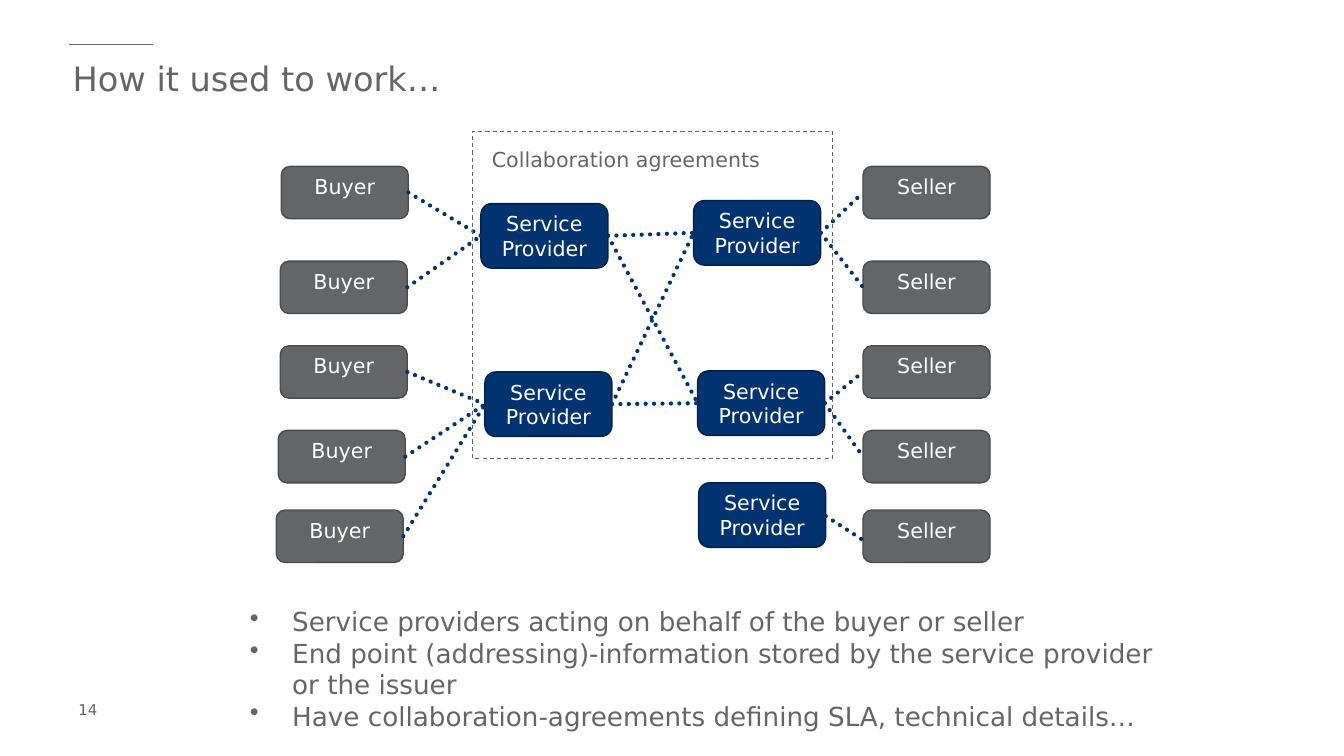
from dataclasses import dataclass

from lxml import etree
from pptx import Presentation
from pptx.dml.color import RGBColor
from pptx.enum.dml import MSO_LINE
from pptx.enum.shapes import MSO_CONNECTOR, MSO_SHAPE
from pptx.enum.text import MSO_ANCHOR, MSO_AUTO_SIZE, PP_ALIGN
from pptx.oxml.ns import qn
from pptx.util import Pt

PX = 9144
TITLE_ONLY = 5
LEFT_SITE, RIGHT_SITE = 1, 3
STRAIGHT = MSO_CONNECTOR.STRAIGHT
ROUNDED, RECTANGLE = MSO_SHAPE.ROUNDED_RECTANGLE, MSO_SHAPE.RECTANGLE
DASH, ROUND_DOT = MSO_LINE.DASH, MSO_LINE.ROUND_DOT
TOP, MIDDLE = MSO_ANCHOR.TOP, MSO_ANCHOR.MIDDLE
LEFT, CENTER = PP_ALIGN.LEFT, PP_ALIGN.CENTER
NO_AUTOFIT = MSO_AUTO_SIZE.NONE


@dataclass(frozen=True)
class Theme:
    font: str = "DejaVu Sans"
    grey: str = "646567"
    grey_edge: str = "4A4B4C"
    navy: str = "00336F"
    navy_edge: str = "00224A"
    white: str = "FFFFFF"
    title: float = 24
    body: float = 18.7
    label: float = 14.7
    number: float = 10.7


class SlideBuilder:
    def __init__(self, slide, theme):
        self.slide = slide
        self.theme = theme

    def add_runs(self, paragraph, text, size, color, align=LEFT):
        paragraph.alignment = align
        for index, line in enumerate(text.split("\n")):
            if index:
                paragraph.add_line_break()
            run = paragraph.add_run()
            run.text = line
            run.font.name = self.theme.font
            run.font.size = Pt(size)
            run.font.color.rgb = RGBColor.from_string(color)

    def place(self, shape, left, top, width, height):
        shape.left, shape.top = left * PX, top * PX
        shape.width, shape.height = width * PX, height * PX

    def title(self, text, *bounds):
        shape = self.slide.shapes.title
        self.place(shape, *bounds)
        frame = shape.text_frame
        frame.auto_size = NO_AUTOFIT
        frame.vertical_anchor = TOP
        frame.margin_left = frame.margin_right = 4 * PX
        frame.margin_top = frame.margin_bottom = 5 * PX
        self.add_runs(frame.paragraphs[0], text, self.theme.title, self.theme.grey)

    def text(self, lines, size, *bounds, bullet_indent=0):
        box = self.slide.shapes.add_textbox(*(value * PX for value in bounds))
        frame = box.text_frame
        frame.word_wrap = True
        for index, line in enumerate(lines):
            paragraph = frame.add_paragraph() if index else frame.paragraphs[0]
            self.add_runs(paragraph, line, size, self.theme.grey)
            if bullet_indent:
                self.bullet(paragraph, bullet_indent * PX)

    def bullet(self, paragraph, indent):
        properties = paragraph._p.get_or_add_pPr()
        properties.set("marL", str(indent))
        properties.set("indent", str(-indent))
        etree.SubElement(properties, qn("a:buChar")).set("char", "•")

    def box(self, text, fill, edge, anchor, *bounds):
        shape = self.slide.shapes.add_shape(ROUNDED, *(value * PX for value in bounds))
        shape.shadow.inherit = False
        shape.fill.solid()
        shape.fill.fore_color.rgb = RGBColor.from_string(fill)
        shape.line.color.rgb = RGBColor.from_string(edge)
        shape.line.width = Pt(1)
        frame = shape.text_frame
        frame.word_wrap = True
        frame.vertical_anchor = anchor
        self.add_runs(frame.paragraphs[0], text, self.theme.label, self.theme.white, CENTER)
        return shape

    def party(self, name, left, top):
        return self.box(name, self.theme.grey, self.theme.grey_edge, TOP, left, top, 126, 52)

    def provider(self, left, top):
        return self.box("Service Provider", self.theme.navy, self.theme.navy_edge,
                        MIDDLE, left, top, 126, 64)

    def dashed_frame(self, *bounds):
        shape = self.slide.shapes.add_shape(RECTANGLE, *(value * PX for value in bounds))
        shape.shadow.inherit = False
        shape.fill.background()
        shape.line.color.rgb = RGBColor.from_string(self.theme.grey)
        shape.line.width = Pt(0.75)
        shape.line.dash_style = DASH

    def line(self, color, width, *points):
        connector = self.slide.shapes.add_connector(STRAIGHT, *(value * PX for value in points))
        connector.line.color.rgb = RGBColor.from_string(color)
        connector.line.width = Pt(width)
        etree.SubElement(connector._element.spPr, qn("a:effectLst"))
        return connector

    def dotted(self, *points):
        connector = self.line(self.theme.navy, 3, *points)
        connector.line.dash_style = ROUND_DOT
        connector._element.spPr.find(qn("a:ln")).set("cap", "rnd")
        return connector

    def link(self, source, target):
        connector = self.dotted(0, 0, 0, 0)
        connector.begin_connect(source, RIGHT_SITE)
        connector.end_connect(target, LEFT_SITE)


def main():
    presentation = Presentation()
    presentation.slide_width, presentation.slide_height = 1333 * PX, 750 * PX
    slide = presentation.slides.add_slide(presentation.slide_layouts[TITLE_ONLY])
    theme = Theme()
    builder = SlideBuilder(slide, theme)

    builder.line(theme.grey, 1, 68, 44, 152, 44)
    builder.title("How it used to work…", 68, 52, 1198, 102)

    row_tops = (165, 259, 343, 427, 506)
    buyer_lefts = (279, 278, 278, 276, 274)
    buyers = [builder.party("Buyer", left, top) for left, top in zip(buyer_lefts, row_tops)]
    sellers = [builder.party("Seller", 856, top) for top in row_tops]

    buyer_providers = [builder.provider(477, 202), builder.provider(481, 369)]
    seller_providers = [builder.provider(688, 199), builder.provider(692, 368)]
    builder.provider(693, 479)

    for buyer, index in zip(buyers, (0, 0, 1, 1, 1)):
        builder.link(buyer, buyer_providers[index])
    for source in buyer_providers:
        for target in seller_providers:
            builder.link(source, target)
    for seller, index in zip(sellers, (0, 0, 1, 1)):
        builder.link(seller_providers[index], seller)

    builder.dashed_frame(469, 130, 357, 325)
    builder.text(["Collaboration agreements"], theme.label, 478, 141, 300, 35)
    builder.dotted(819, 512, 861, 539)

    builder.text([
        "Service providers acting on behalf of the buyer or seller",
        "End point (addressing)-information stored by the service provider\nor the issuer",
        "Have collaboration-agreements defining SLA, technical details…",
    ], theme.body, 238, 596, 941, 150, bullet_indent=42)
    builder.text(["14"], theme.number, 68, 690, 136, 32)

    presentation.save("out.pptx")


if __name__ == "__main__":
    main()
